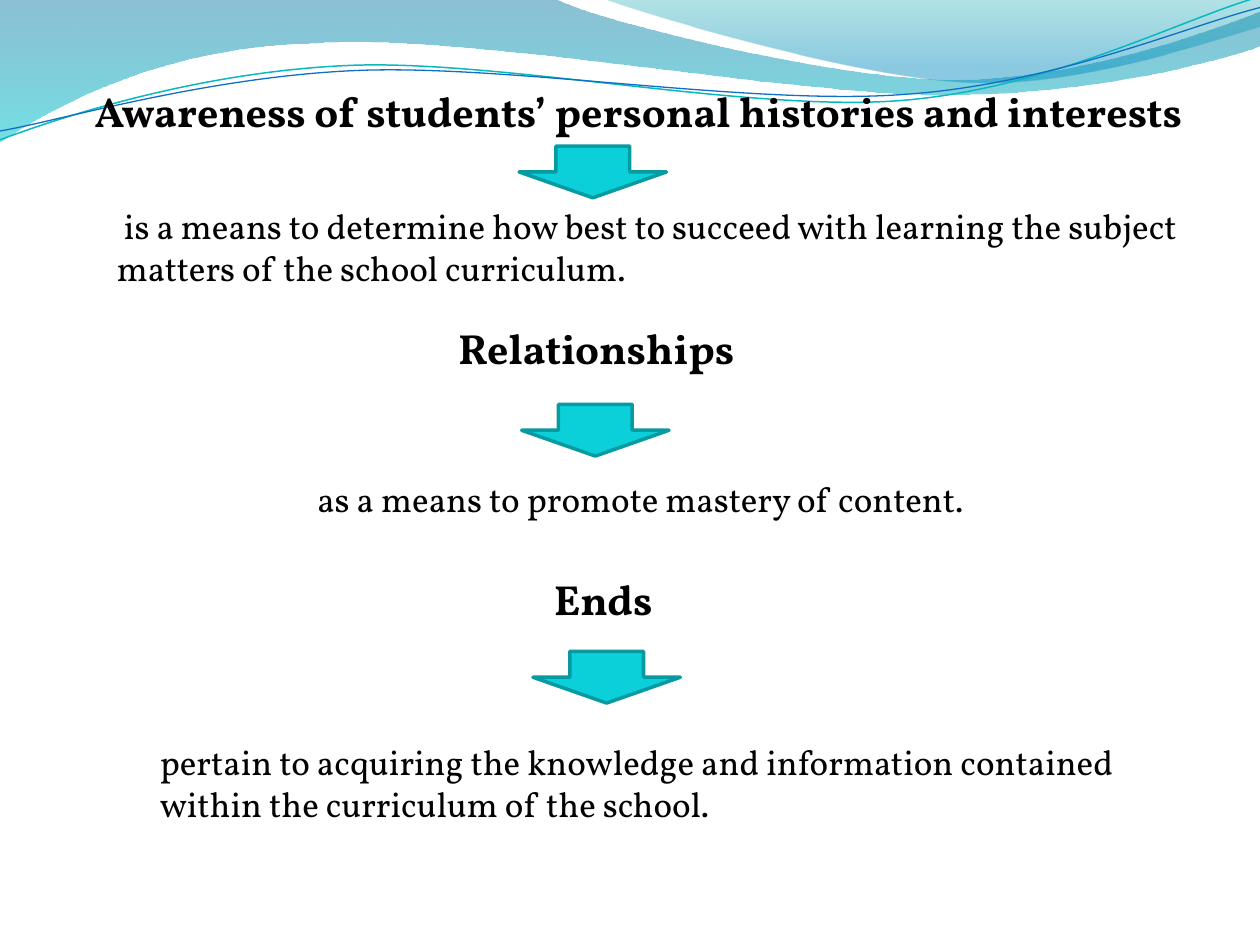
from dataclasses import dataclass

from lxml import etree
from pptx import Presentation
from pptx.dml.color import RGBColor
from pptx.enum import shapes, text
from pptx.oxml.ns import qn
from pptx.util import Inches, Pt


@dataclass(frozen=True)
class Theme:
    font: str = "Vollkorn"
    head: int = 24
    body: int = 20
    ink: str = "000000"
    arrow: str = "0BD0D9"
    edge: str = "089AA1"


THEME = Theme()

# Each band: start, segments (2 numbers = line, 6 = curve),
# gradient stops (position, colour, opacity in percent)
BANDS = [
    ((0, 0),
     [(4.4, -0.01), (4.76, 0.17, 6.64, 0.63, 7.58, 0.63),
      (8.53, 0.63, 9.58, 0.26, 10, 0.09), (10.01, 0.36),
      (9.83, 0.44, 8.7, 0.76, 7.46, 0.75),
      (6.22, 0.75, 3.82, 0.28, 2.57, 0.34),
      (1.29, 0.36, 0.46, 0.83, -0.01, 1.13)],
     [(0, "0074A1", 45), (1, "00C6CF", 55)]),
    ((4.79, -0.01),
     [(5.09, 0.11, 6.82, 0.62, 7.69, 0.65),
      (8.56, 0.69, 9.61, 0.32, 10, 0.21), (10, 0)],
     [(0, "00A1A9", 30), (0.8, "008BBF", 45)]),
]

# Each wave: start, segments, colour, width
WAVES = [
    ((0, 1.11),
     [(0.48, 0.93, 1.58, 0.57, 2.77, 0.52),
      (3.95, 0.47, 5.93, 0.89, 7.13, 0.8),
      (8.33, 0.71, 9.38, 0.15, 9.98, -0.02)], "0AB8BF", 0.85),
    ((0, 1.04),
     [(0.47, 0.96, 1.64, 0.61, 2.83, 0.56),
      (4.03, 0.51, 5.97, 0.84, 7.17, 0.75),
      (8.36, 0.67, 9.41, 0.21, 10, 0.06)], "0F6FC6", 0.75),
]

# Each text: words, left, top, width, height, size, bold
TEXTS = [
    (" is a means to determine how best to succeed with learning the subject "
     "matters of the school curriculum.",
     0.83, 1.57, 8.92, 0.77, THEME.body, False),
    ("Relationships", 3.54, 2.51, 8.42, 0.5, THEME.head, True),
    ("as a means to promote mastery of content.",
     2.42, 3.74, 8.8, 0.44, THEME.body, False),
    ("Ends", 4.3, 4.5, 2.75, 0.5, THEME.head, True),
    ("pertain to acquiring the knowledge and information contained "
     "within the curriculum of the school.",
     1.17, 5.83, 8.17, 0.77, THEME.body, False),
]

ARROWS = [(4.12, 1.16), (4.14, 3.21), (4.23, 5.17)]
GRID = 1000  # path units to the inch


def rgb(code):
    return RGBColor.from_string(code)


def add_path(slide, start, parts, close):
    """Draw the outline through its end points, then bend the curved parts."""
    start = [round(n * GRID) for n in start]
    parts = [[round(n * GRID) for n in part] for part in parts]
    ends = [part[-2:] for part in parts]
    pen = slide.shapes.build_freeform(*start, scale=Inches(1) / GRID)
    pen.add_line_segments(ends, close=close)
    shape = pen.convert_to_shape()
    shape.shadow.inherit = False

    left, top = (min(axis) for axis in zip(start, *ends))
    lines = list(shape._element.iter(qn("a:lnTo")))
    for line, part in zip(lines, parts):
        if len(part) == 2:
            continue
        curve = etree.Element(qn("a:cubicBezTo"))
        for x, y in zip(part[::2], part[1::2]):
            etree.SubElement(curve, qn("a:pt"),
                             x=str(x - left), y=str(y - top))
        line.getparent().replace(line, curve)
    return shape


def add_band(slide, start, parts, stops):
    band = add_path(slide, start, parts, True)
    band.line.fill.background()
    band.fill.gradient()
    band.fill.gradient_angle = 270
    for stop, (pos, code, _) in zip(band.fill.gradient_stops, stops):
        stop.position = pos
        stop.color.rgb = rgb(code)
    tones = band._element.spPr.iter(qn("a:srgbClr"))
    for tone, (_, _, alpha) in zip(tones, stops):
        etree.SubElement(tone, qn("a:alpha"), val=str(alpha * 1000))


def add_wave(slide, start, parts, code, width):
    wave = add_path(slide, start, parts, False)
    wave.fill.background()
    wave.line.color.rgb = rgb(code)
    wave.line.width = Pt(width)


def put_text(frame, words, size, bold):
    frame.text = words
    frame.word_wrap = True
    frame.vertical_anchor = text.MSO_ANCHOR.TOP
    para = frame.paragraphs[0]
    para.alignment = text.PP_ALIGN.LEFT
    font = para.runs[0].font
    font.name, font.size, font.bold = THEME.font, Pt(size), bold
    font.color.rgb = rgb(THEME.ink)


def add_text(slide, words, left, top, width, height, size, bold):
    box = slide.shapes.add_textbox(*map(Inches, (left, top, width, height)))
    put_text(box.text_frame, words, size, bold)
    box.text_frame.auto_size = text.MSO_AUTO_SIZE.SHAPE_TO_FIT_TEXT


def add_arrow(slide, left, top):
    arrow = slide.shapes.add_shape(shapes.MSO_SHAPE.DOWN_ARROW,
                                   *map(Inches, (left, top, 1.17, 0.41)))
    arrow.shadow.inherit = False
    arrow.fill.solid()
    arrow.fill.fore_color.rgb = rgb(THEME.arrow)
    arrow.line.color.rgb = rgb(THEME.edge)
    arrow.line.width = Pt(2)


def set_head(slide, words):
    """Fill the subtitle, bring it above the waves and drop the empty title."""
    tree = slide.shapes._spTree
    tree.remove(slide.shapes.title._element)
    head = slide.placeholders[1]
    tree.append(head._element)
    head.left, head.top, head.width, head.height = map(
        Inches, (0.75, 0.63, 10, 1.92))
    frame = head.text_frame
    frame.margin_left, frame.margin_right = 0, Inches(0.02)
    put_text(frame, words, THEME.head, True)


def main():
    deck = Presentation()
    deck.slide_width, deck.slide_height = Inches(10), Inches(7.5)
    slide = deck.slides.add_slide(deck.slide_layouts[0])
    for band in BANDS:
        add_band(slide, *band)
    for wave in WAVES:
        add_wave(slide, *wave)
    set_head(slide, "Awareness of students’ personal histories and interests")
    for item in TEXTS:
        add_text(slide, *item)
    for spot in ARROWS:
        add_arrow(slide, *spot)
    deck.save("out.pptx")


if __name__ == "__main__":
    main()
